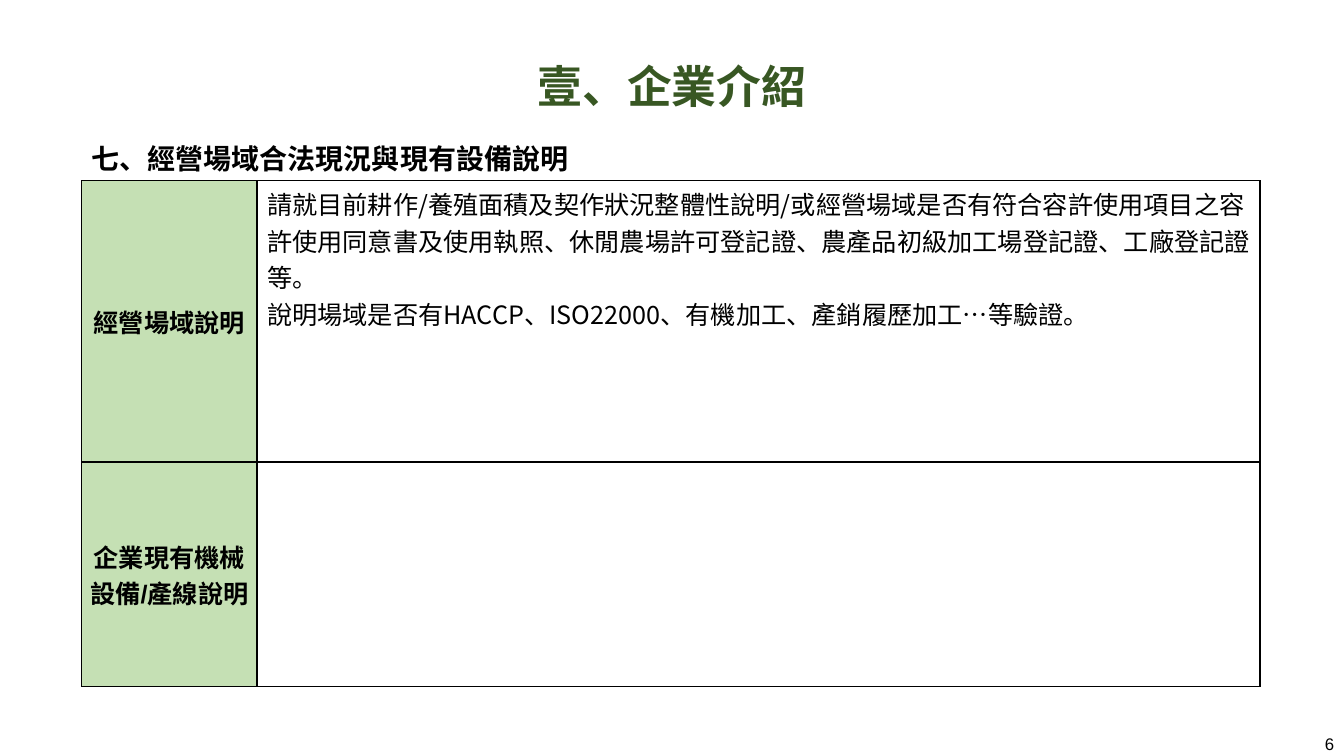
from lxml import etree
from pptx import Presentation
from pptx.dml.color import RGBColor
from pptx.enum.text import MSO_ANCHOR as ANCHOR, MSO_AUTO_SIZE as FIT, PP_ALIGN as AL
from pptx.oxml.ns import qn
from pptx.util import Pt

GREEN = RGBColor(0x38, 0x57, 0x23)
PALE = RGBColor(0xC5, 0xE0, 0xB4)
BLACK = RGBColor(0, 0, 0)
CJK, LATIN = "Noto Sans CJK SC", "Arial"


class Deck:
    def __init__(self, width, height):
        self.prs = Presentation()
        self.prs.slide_width, self.prs.slide_height = Pt(width), Pt(height)
        self.s = self.prs.slides.add_slide(self.prs.slide_layouts[5])

    def style(self, p, size, font, color=BLACK, bold=False, align=AL.LEFT):
        p.alignment = align
        for r in p.runs:
            f = r.font
            f.size, f.name, f.bold = Pt(size), font, bold
            f.color.rgb = color
            if font == CJK:
                r._r.get_or_add_rPr().find(qn("a:latin")).addnext(
                    etree.Element(qn("a:ea"), typeface=font))

    def place(self, sp, box):
        sp.left, sp.top, sp.width, sp.height = (Pt(v) for v in box)

    def title(self, text, box):
        sp = self.s.shapes.title
        self.place(sp, box)
        tf = sp.text_frame
        tf.text = text
        tf.auto_size, tf.vertical_anchor = FIT.SHAPE_TO_FIT_TEXT, ANCHOR.TOP
        self.style(tf.paragraphs[0], 32, CJK, GREEN, True, AL.CENTER)

    def text(self, text, box, size, font, **look):
        tf = self.s.shapes.add_textbox(*(Pt(v) for v in box)).text_frame
        tf.word_wrap = True
        tf.text = text
        self.style(tf.paragraphs[0], size, font, **look)
        return tf

    def borders(self, cell):
        tcPr = cell._tc.get_or_add_tcPr()
        for i, side in enumerate(("lnL", "lnR", "lnT", "lnB")):
            ln = etree.Element(qn(f"a:{side}"), w=str(Pt(1)))
            fill = etree.SubElement(ln, qn("a:solidFill"))
            etree.SubElement(fill, qn("a:srgbClr"), val=str(BLACK))
            tcPr.insert(i, ln)

    def label_cell(self, cell, text):
        cell.text = text
        cell.fill.solid()
        cell.fill.fore_color.rgb = PALE
        cell.vertical_anchor = ANCHOR.MIDDLE
        cell.margin_left = cell.margin_right = Pt(5)
        cell.margin_top = cell.margin_bottom = Pt(0)
        p = cell.text_frame.paragraphs[0]
        p.space_after = Pt(6)
        self.style(p, 18, LATIN, bold=True, align=AL.CENTER)

    def body_cell(self, cell, text):
        cell.text = text
        cell.fill.background()
        for p in cell.text_frame.paragraphs:
            self.style(p, 18, CJK)

    def table(self, rows, left, top, widths, heights):
        size = sum(widths), sum(heights)
        tbl = self.s.shapes.add_table(
            len(heights), len(widths), *(Pt(v) for v in (left, top, *size))).table
        tbl.first_row = tbl.horz_banding = False
        for col, w in zip(tbl.columns, widths):
            col.width = Pt(w)
        for i, (label, body) in enumerate(rows):
            tbl.rows[i].height = Pt(heights[i])
            self.label_cell(tbl.cell(i, 0), label)
            self.body_cell(tbl.cell(i, 1), body)
        for cell in tbl.iter_cells():
            self.borders(cell)


def main():
    deck = Deck(960, 540)

    # Title and section heading
    deck.title("壹、企業介紹", (0, 38, 960, 46))
    tf = deck.text("七、經營場域合法現況與現有設備說明", (58.3, 99.4, 383, 29.5),
                   20, CJK, bold=True)
    tf.auto_size = FIT.SHAPE_TO_FIT_TEXT
    tf.paragraphs[0].line_spacing = Pt(22)
    tf.paragraphs[0].space_after = Pt(6)

    # Site and equipment table
    site = ("請就目前耕作/養殖面積及契作狀況整體性說明/或經營場域是否有符合容許使用項目之"
            "容許使用同意書及使用執照、休閒農場許可登記證、農產品初級加工場登記證、工廠登記證等。\n"
            "說明場域是否有HACCP、ISO22000、有機加工、產銷履歷加工…等驗證。")
    deck.table([("經營場域說明", site), ("企業現有機械設備/產線說明", "")],
               58.3, 129, (125.3, 716.4), (201, 160.5))

    # Page number
    deck.text("6", (744, 520.5, 216, 19.5), 12, LATIN, align=AL.RIGHT)

    deck.prs.save("out.pptx")


if __name__ == "__main__":
    main()
